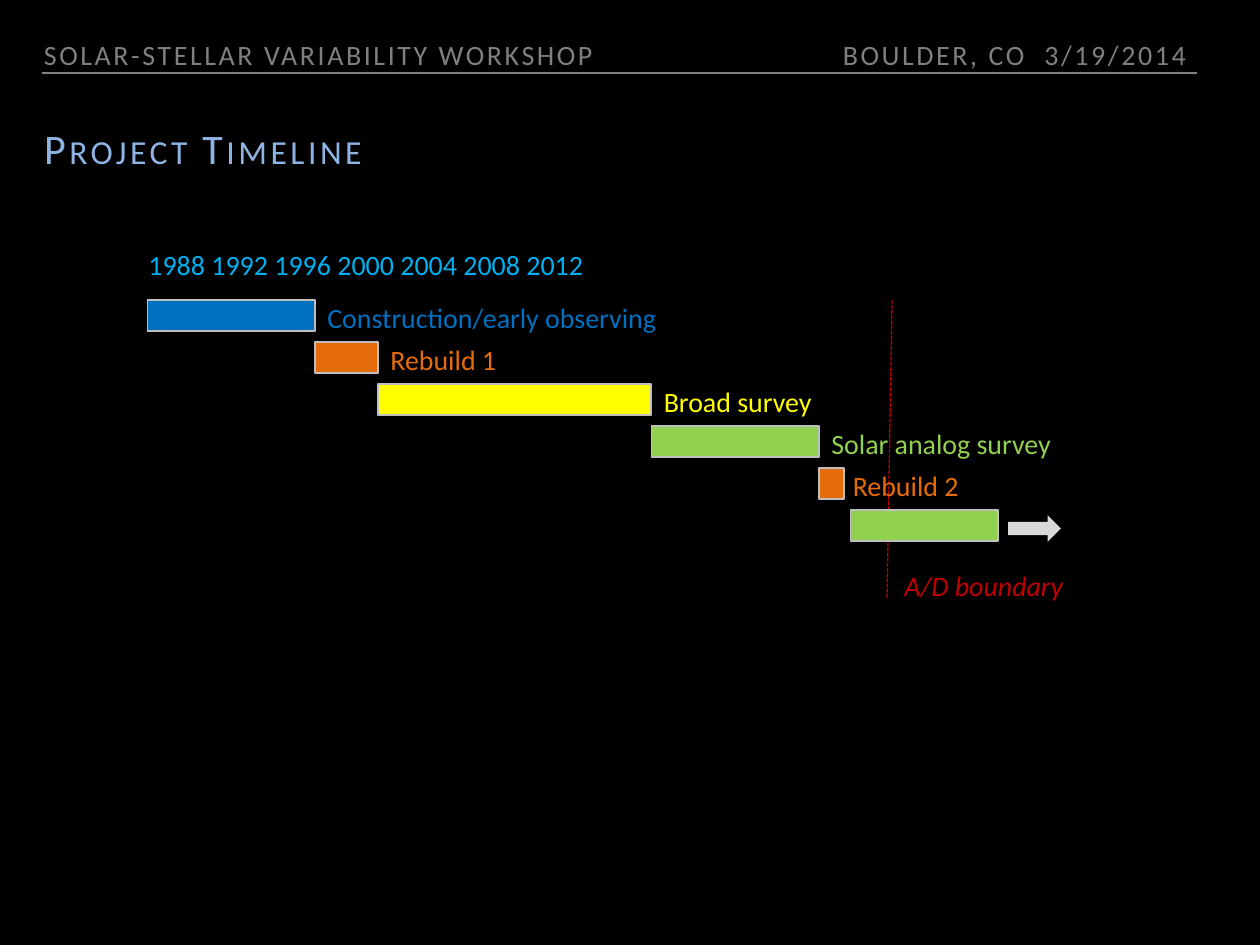
from lxml.etree import SubElement
from pptx import Presentation
from pptx.dml.color import RGBColor
from pptx.enum.dml import MSO_LINE
from pptx.enum.shapes import MSO_CONNECTOR, MSO_SHAPE
from pptx.enum.text import MSO_ANCHOR, PP_ALIGN
from pptx.oxml.ns import qn
from pptx.util import Inches, Pt

BLACK = RGBColor(0x00, 0x00, 0x00)
GRAY = RGBColor(0x80, 0x80, 0x80)
OUTLINE = RGBColor(0xBF, 0xBF, 0xBF)
ARROW = RGBColor(0xD9, 0xD9, 0xD9)
TITLE = RGBColor(0x8E, 0xB4, 0xE3)
SKY = RGBColor(0x00, 0xB0, 0xF0)
BLUE = RGBColor(0x00, 0x70, 0xC0)
ORANGE = RGBColor(0xE4, 0x6C, 0x0A)
YELLOW = RGBColor(0xFF, 0xFF, 0x00)
GREEN = RGBColor(0x92, 0xD0, 0x50)
RED = RGBColor(0xC0, 0x00, 0x00)

deck = Presentation()
deck.slide_width = Inches(10)
deck.slide_height = Inches(7.5)
page = deck.slides.add_slide(deck.slide_layouts[5])
page.background.fill.solid()
page.background.fill.fore_color.rgb = BLACK


def write(box, place, text, size, color, italic=False, **marks):
    box.left, box.top, box.width, box.height = [Inches(value) for value in place]
    frame = box.text_frame
    frame.word_wrap = True
    frame.vertical_anchor = MSO_ANCHOR.TOP
    para = frame.paragraphs[0]
    para.alignment = PP_ALIGN.LEFT
    span = para.add_run()
    span.text = text
    font_format = {"name": "Calibri", "size": Pt(size), "italic": italic}
    for name, value in font_format.items():
        setattr(span.font, name, value)
    span.font.color.rgb = color
    for name, value in marks.items():
        span.font._element.set(name, value)
    return para


def draw_line(start, end, color):
    line = page.shapes.add_connector(
        MSO_CONNECTOR.STRAIGHT, *[Inches(value) for value in start + end])
    line.line.color.rgb = color
    line.line.width = Pt(0.75)
    SubElement(line._element.spPr, qn("a:effectLst"))
    return line


header = page.shapes.add_textbox(0, 0, 0, 0)
header_para = write(header, (0.25, 0.25, 9.42, 0.37),
                    "SOLAR-STELLAR VARIABILITY WORKSHOP\tBOULDER, CO\t3/19/2014",
                    16, GRAY, spc="150")
tab_list = SubElement(header_para._p.get_or_add_pPr(), qn("a:tabLst"))
for position in (6.34, 7.94):
    SubElement(tab_list, qn("a:tab"), pos=str(Inches(position)), algn="l")
draw_line((0.33, 0.58), (9.5, 0.58), GRAY)

boundary = draw_line((7.08, 2.38), (7.04, 4.75), RED)
boundary.line.dash_style = MSO_LINE.SQUARE_DOT

write(page.shapes.title, (0.25, 0.92, 9.58, 0.5), "Project Timeline",
      24, TITLE, spc="200", cap="small")
years = "\t".join(str(year) for year in range(1988, 2013, 4))
write(page.shapes.add_textbox(0, 0, 0, 0), (1.08, 1.86, 7.83, 0.44),
      years, 20, SKY, cap="small")

phases = [
    (1.17, 2.5, BLUE, "Construction/early observing", 2.5, 2.96),
    (2.5, 3, ORANGE, "Rebuild 1", 3, 1.58),
    (3, 5.17, YELLOW, "Broad survey", 5.17, 2.75),
    (5.17, 6.5, GREEN, "Solar analog survey", 6.5, 2),
    (6.5, 6.7, ORANGE, "Rebuild 2", 6.67, 1.12),
    (6.75, 7.92, GREEN, None, None, None),
]
for row, (start, end, color, label, label_left, label_width) in enumerate(phases):
    top = 2.38 + row / 3
    bar = page.shapes.add_shape(MSO_SHAPE.RECTANGLE, Inches(start), Inches(top),
                                Inches(end - start), Inches(0.25))
    bar.shadow.inherit = False
    bar.fill.solid()
    bar.fill.fore_color.rgb = color
    bar.line.color.rgb = OUTLINE
    bar.line.width = Pt(1)
    if label:
        write(page.shapes.add_textbox(0, 0, 0, 0),
              (label_left, top - 0.04, label_width, 0.37), label, 16, color)

arrow = page.shapes.add_shape(MSO_SHAPE.RIGHT_ARROW, Inches(8), Inches(4.09),
                              Inches(0.42), Inches(0.21))
arrow.shadow.inherit = False
arrow.fill.solid()
arrow.fill.fore_color.rgb = ARROW
arrow.line.fill.background()

write(page.shapes.add_textbox(0, 0, 0, 0), (7.08, 4.46, 1.58, 0.37),
      "A/D boundary", 16, RED, italic=True)

deck.save("out.pptx")
